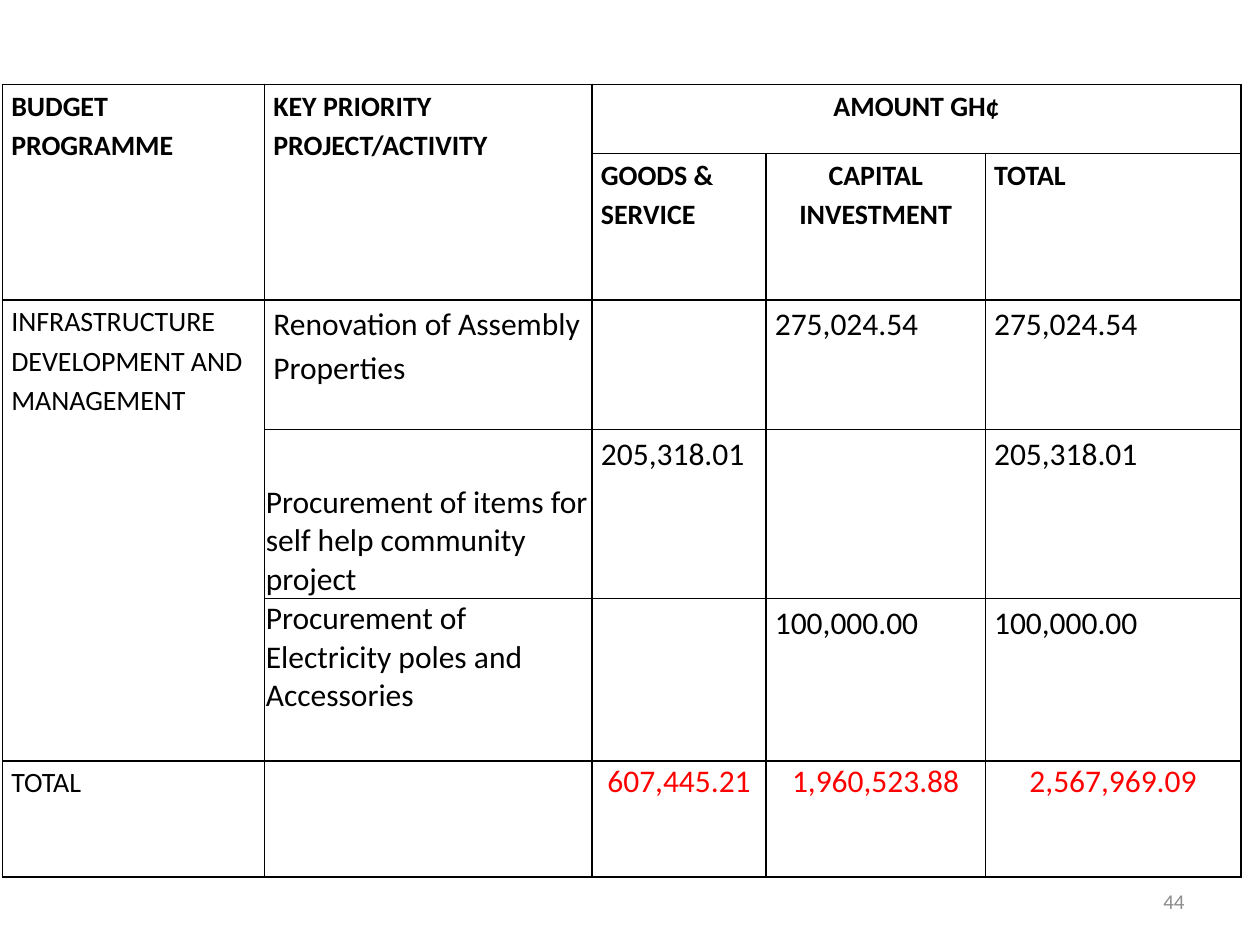
import dataclasses

import lxml.etree
import pptx
import pptx.dml.color
import pptx.enum.text
import pptx.oxml
import pptx.oxml.ns
import pptx.util

Inches = pptx.util.Inches
Align = pptx.enum.text.PP_ALIGN
Anchor = pptx.enum.text.MSO_ANCHOR


@dataclasses.dataclass(frozen=True)
class Theme:
    """Hold the colours, font and type sizes."""
    font: str = "Calibri"
    ink: str = "000000"
    red: str = "FF0000"
    gray: str = "8C8C8C"
    label: int = 16
    body: int = 18
    small: int = 12
    line: int = 1


THEME = Theme()
COLS = (2.08, 2.6, 1.38, 1.74, 2.03)
ROWS = (0.55, 1.16, 1.03, 1.34, 1.29, 0.92)
SPANS = (((0, 0), (1, 0)), ((0, 1), (1, 1)), ((0, 2), (0, 4)), ((2, 0), (4, 0)))

BASE = {"size": THEME.body, "color": THEME.ink, "bold": False,
        "align": Align.LEFT, "space": 1.15}
LABEL = BASE | {"size": THEME.label}
HEAD = LABEL | {"bold": True}
MID = HEAD | {"align": Align.CENTER}
TASK = BASE | {"space": 1.0}
SUM = TASK | {"color": THEME.red, "align": Align.CENTER}
PAGE = TASK | {"size": THEME.small, "color": THEME.gray, "align": Align.RIGHT}

WIDE = {"margin_left": Inches(0.07), "margin_right": Inches(0.07),
        "margin_top": 0, "margin_bottom": 0, "vertical_anchor": Anchor.TOP}
TIGHT = WIDE | {"margin_left": Inches(0.01), "margin_right": Inches(0.01),
                "margin_top": Inches(0.01)}
LOW = TIGHT | {"vertical_anchor": Anchor.BOTTOM}

CELLS = (
    (0, 0, "BUDGET PROGRAMME", HEAD, WIDE),
    (0, 1, "KEY PRIORITY PROJECT/ACTIVITY", HEAD, WIDE),
    (0, 2, "AMOUNT GH¢", MID, WIDE),
    (1, 2, "GOODS & SERVICE", HEAD, WIDE),
    (1, 3, "CAPITAL INVESTMENT", MID, WIDE),
    (1, 4, "TOTAL", HEAD, WIDE),
    (2, 0, "INFRASTRUCTURE DEVELOPMENT AND MANAGEMENT", LABEL, WIDE),
    (2, 1, "Renovation of Assembly Properties", BASE, WIDE),
    (2, 3, "275,024.54", BASE, WIDE),
    (2, 4, "275,024.54", BASE, WIDE),
    (3, 1, "Procurement of items for self help community project", TASK, LOW),
    (3, 2, "205,318.01", BASE, WIDE),
    (3, 4, "205,318.01", BASE, WIDE),
    (4, 1, "Procurement of Electricity poles and Accessories", TASK, TIGHT),
    (4, 3, "100,000.00", BASE, WIDE),
    (4, 4, "100,000.00", BASE, WIDE),
    (5, 0, "TOTAL", LABEL, WIDE),
    (5, 2, "607,445.21", SUM, TIGHT),
    (5, 3, "1,960,523.88", SUM, TIGHT),
    (5, 4, "2,567,969.09", SUM, TIGHT),
)


def apply(item, form):
    """Set each attribute named in a dict of format values."""
    for name, value in form.items():
        setattr(item, name, value)


def write(frame, text, style):
    """Put one styled paragraph in a text frame."""
    par = frame.paragraphs[0]
    apply(par, {"alignment": style["align"], "line_spacing": style["space"]})
    run = par.add_run()
    run.text = text
    apply(run.font, {"name": THEME.font, "bold": style["bold"],
                     "size": pptx.util.Pt(style["size"])})
    run.font.color.rgb = pptx.dml.color.RGBColor.from_string(style["color"])


def frame_cell(cell):
    """Draw the four borders of a cell and clear its fill."""
    props = cell._tc.get_or_add_tcPr()
    space = pptx.oxml.ns.nsdecls("a")
    for side in "LRTB":
        props.append(pptx.oxml.parse_xml(
            f'<a:ln{side} {space} w="{pptx.util.Pt(THEME.line)}"><a:solidFill>'
            f'<a:srgbClr val="{THEME.ink}"/></a:solidFill></a:ln{side}>'))
    cell.fill.background()


def add_grid(slide):
    """Add the budget table."""
    table = slide.shapes.add_table(
        len(ROWS), len(COLS), Inches(0.02), Inches(0.67),
        Inches(sum(COLS)), Inches(sum(ROWS))).table
    apply(table, {"first_row": False, "horz_banding": False})
    for col, width in zip(table.columns, COLS):
        col.width = Inches(width)
    for row, height in zip(table.rows, ROWS):
        row.height = Inches(height)
    for cell in table.iter_cells():
        frame_cell(cell)
    for first, last in SPANS:
        table.cell(*first).merge(table.cell(*last))
    for row, col, text, style, form in CELLS:
        cell = table.cell(row, col)
        apply(cell, form)
        write(cell.text_frame, text, style)


def add_page(slide, text):
    """Add the page number."""
    box = slide.shapes.add_textbox(
        Inches(7.17), Inches(6.95), Inches(2.33), Inches(0.4))
    apply(box.text_frame, {"word_wrap": True, "vertical_anchor": Anchor.MIDDLE})
    write(box.text_frame, text, PAGE)


def main():
    """Build and save the slide."""
    deck = pptx.Presentation()
    apply(deck, {"slide_width": Inches(10), "slide_height": Inches(7.5)})
    slide = deck.slides.add_slide(deck.slide_layouts[6])
    add_grid(slide)
    add_page(slide, "44")
    deck.save("out.pptx")


if __name__ == "__main__":
    main()
